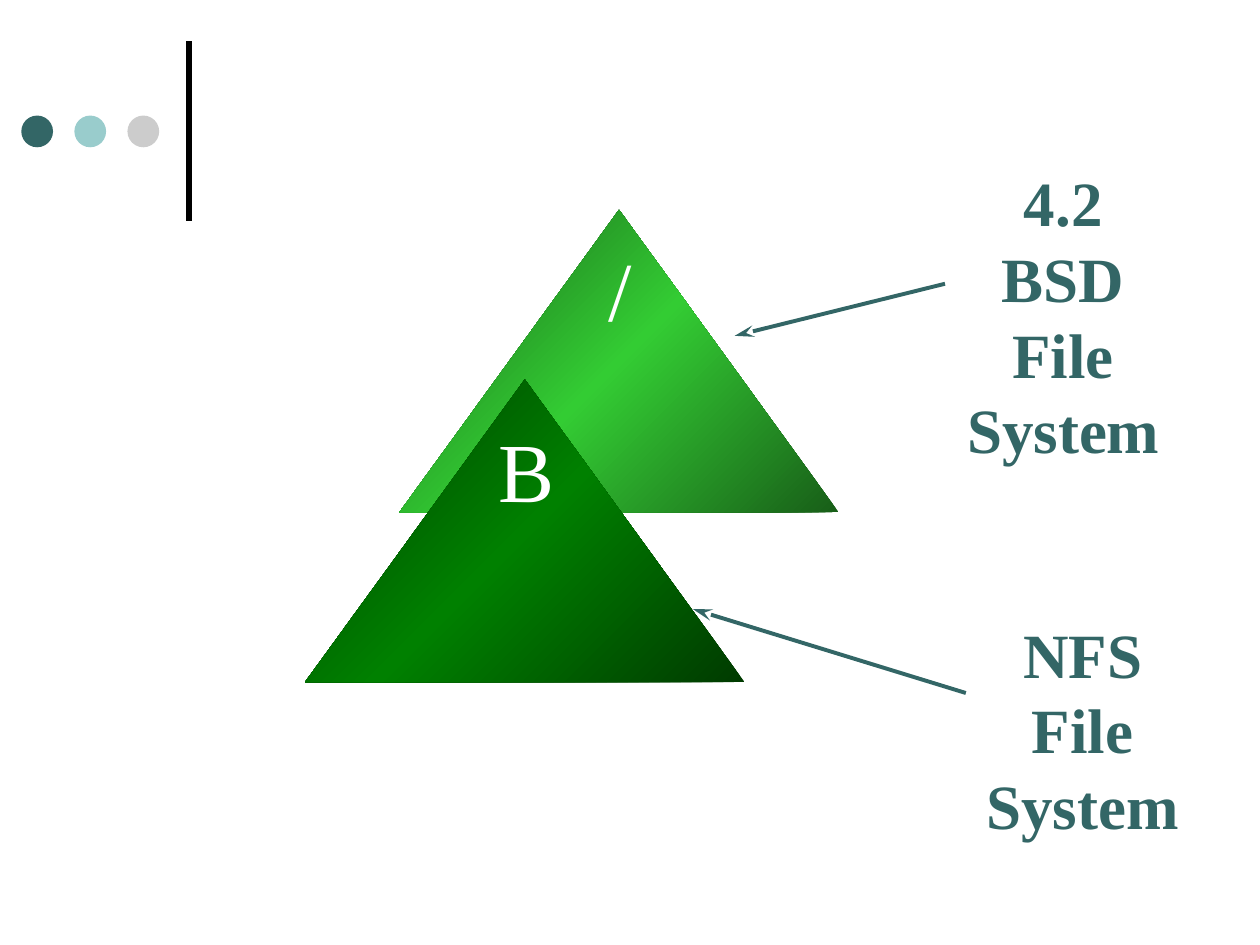
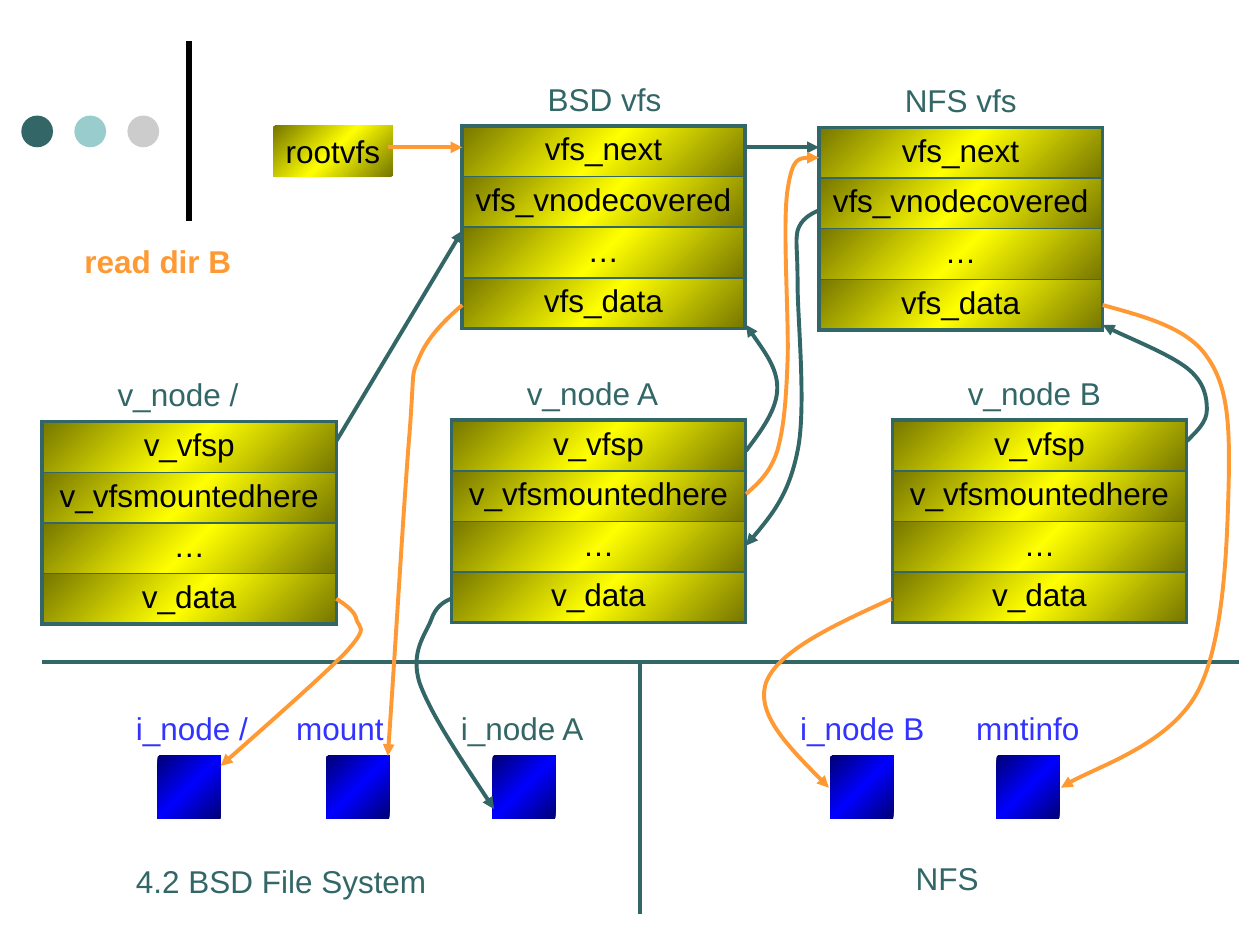
from copy import deepcopy
from itertools import chain

from lxml.etree import SubElement
from pptx import Presentation
from pptx.dml.color import RGBColor
from pptx.enum.shapes import MSO_CONNECTOR as CONN, MSO_SHAPE as SHAPE
from pptx.enum.text import MSO_AUTO_SIZE as FIT, PP_ALIGN as ALIGN
from pptx.oxml.ns import qn
from pptx.util import Cm, Pt

TEAL = RGBColor(0x33, 0x66, 0x66)
AQUA = RGBColor(0x99, 0xCC, 0xCC)
GREY = RGBColor(0xCC, 0xCC, 0xCC)
BLACK = RGBColor(0, 0, 0)
WHITE = RGBColor(0xFF, 0xFF, 0xFF)
ORANGE = RGBColor(0xFF, 0x99, 0x33)
VIOLET = RGBColor(0x33, 0x33, 0xFF)
# Gradients: edge colour, middle colour
LIME_SHADE = RGBColor(0x18, 0x5E, 0x18), RGBColor(0x33, 0xCC, 0x33)
GREEN_SHADE = RGBColor(0, 0x3B, 0), RGBColor(0, 0x80, 0)
YELLOW_SHADE = RGBColor(0x76, 0x76, 0), RGBColor(0xFF, 0xFF, 0)
BLUE_SHADE = RGBColor(0, 0, 0x76), RGBColor(0, 0, 0xFF)


def write(tf, text, size=18, color=TEAL, font="Arial", bold=False,
          align=ALIGN.LEFT, wrap=False, spacing=1.2):
    """Fill a text frame, one paragraph per line of text."""
    tf.word_wrap = wrap
    tf.auto_size = FIT.NONE if wrap else FIT.SHAPE_TO_FIT_TEXT
    for i, line in enumerate(text.split("\n")):
        p = tf.paragraphs[0] if i == 0 else tf.add_paragraph()
        p.alignment = align
        if spacing:
            p.line_spacing = Pt(size * spacing)
        r = p.add_run()
        r.text = line
        r.font.size, r.font.bold, r.font.name = Pt(size), bold, font
        r.font.color.rgb = color


def shade(fill, element, colors):
    """Diagonal gradient: edge, middle, edge."""
    edge, middle = colors
    fill.gradient()
    fill.gradient_angle = 315
    stops = element.find(".//" + qn("a:gsLst"))
    stops.append(deepcopy(stops[0]))
    for stop, pos, color in zip(fill.gradient_stops, (0, 0.5, 1), (edge, middle, edge)):
        stop.position = pos
        stop.color.rgb = color


prs = Presentation()
prs.slide_width, prs.slide_height = Cm(25.4), Cm(19.05)
trees, vfs = [prs.slides.add_slide(prs.slide_layouts[6]) for _ in range(2)]

# Shared dots and rule; lines are (slide, points, colour, width, arrowhead)
lines = []
for s in (trees, vfs):
    for i, color in enumerate((TEAL, AQUA, GREY)):
        sp = s.shapes.add_shape(SHAPE.OVAL, Cm(0.43 + 1.07 * i), Cm(2.33), Cm(0.64), Cm(0.64))
        sp.shadow.inherit = False
        sp.fill.solid()
        sp.fill.fore_color.rgb = color
        sp.line.fill.background()
    lines.append((s, [(3.81, 4.45), (3.81, 0.83)], BLACK, 3, None))

# Gradient shapes: the two file trees and the disk structures
blocks = [
    (trees, SHAPE.ISOSCELES_TRIANGLE, 8.05, 4.23, 8.86, 6.1, LIME_SHADE),
    (trees, SHAPE.ISOSCELES_TRIANGLE, 6.15, 7.65, 8.86, 6.1, GREEN_SHADE),
]
blocks += [(vfs, SHAPE.RECTANGLE, x, 15.24, 1.27, 1.27, BLUE_SHADE)
           for x in (3.18, 6.58, 9.93, 16.74, 20.09)]
for s, kind, x, y, w, h, colors in blocks:
    sp = s.shapes.add_shape(kind, Cm(x), Cm(y), Cm(w), Cm(h))
    sp.shadow.inherit = False
    sp.line.fill.background()
    shade(sp.fill, sp._element, colors)

# Slide 1: tree names and labels
root_name = dict(size=48, color=WHITE, font="Times New Roman")
fs_label = dict(size=36, font="Times New Roman", bold=True, align=ALIGN.CENTER, wrap=True)
for text, x, y, w, h, fmt in (
    ("/", 12.01, 4.67, 0.97, 2.29, root_name),
    ("B", 9.8, 8.31, 1.63, 2.29, root_name),
    ("4.2 BSD\nFile\nSystem", 19, 3.18, 4.87, 4.83, fs_label),
    ("NFS\nFile\nSystem", 19.63, 12.28, 4.39, 4.83, fs_label),
):
    write(trees.shapes.add_textbox(Cm(x), Cm(y), Cm(w), Cm(h)).text_frame, text, **fmt)
for points in ([(19.05, 5.72), (14.81, 6.77)], [(19.47, 13.97), (13.97, 12.28)]):
    lines.append((trees, points, TEAL, 2.25, "stealth"))

# Slide 2: the root pointer
sp = vfs.shapes.add_shape(SHAPE.RECTANGLE, Cm(5.51), Cm(2.54), Cm(2.41), Cm(1.02))
sp.shadow.inherit = False
sp.line.fill.background()
shade(sp.fill, sp._element, YELLOW_SHADE)
write(sp.text_frame, "rootvfs", color=BLACK)

# Slide 2: record tables with their captions
VFS_ROWS = "vfs_next", "vfs_vnodecovered", "…", "vfs_data"
NODE_ROWS = "v_vfsp", "v_vfsmountedhere", "…", "v_data"
ROW = 1.02
captions = []
for name, x, y, w, rows, indent, name_w in (
    ("BSD vfs", 9.31, 2.54, 5.71, VFS_ROWS, 1.48, 3),
    ("NFS vfs", 16.51, 2.57, 5.71, VFS_ROWS, 1.48, 3),
    ("v_node /", 0.85, 8.5, 5.93, NODE_ROWS, 1.27, 3.2),
    ("v_node A", 9.1, 8.47, 5.93, NODE_ROWS, 1.27, 3.2),
    ("v_node B", 17.99, 8.47, 5.93, NODE_ROWS, 1.27, 3.2),
):
    captions.append((name, x + indent, y - 1.06, name_w, TEAL, False))
    table = vfs.shapes.add_table(4, 1, Cm(x), Cm(y), Cm(w), Cm(4 * ROW)).table
    table.first_row = table.horz_banding = False
    for i, text in enumerate(rows):
        table.rows[i].height = Cm(ROW)
        cell = table.cell(i, 0)
        write(cell.text_frame, text, color=BLACK, align=ALIGN.CENTER, wrap=True, spacing=None)
        tcPr = cell._tc.get_or_add_tcPr()
        widths = (2.25, 2.25, 2.25 if i == 0 else 1, 2.25 if i == 3 else 1)
        for side, width in zip("LRTB", widths):
            ln = SubElement(tcPr, qn("a:ln" + side), w=str(Pt(width)))
            SubElement(SubElement(ln, qn("a:solidFill")), qn("a:srgbClr"), val=str(TEAL))
        shade(cell.fill, cell._tc, YELLOW_SHADE)

# Slide 2: other captions (text, left, top, width, colour, bold)
DISK_Y = 14.17
captions += [
    ("i_node /", 2.49, DISK_Y, 2.9, VIOLET, False),
    ("mount", 5.72, DISK_Y, 2.4, VIOLET, False),
    ("i_node A", 9.04, DISK_Y, 3.1, TEAL, False),
    ("i_node B", 15.88, DISK_Y, 3.1, VIOLET, False),
    ("mntinfo", 19.43, DISK_Y, 2.7, VIOLET, False),
    ("4.2 BSD File System", 2.49, 17.25, 6.5, TEAL, False),
    ("NFS", 18.21, 17.2, 1.9, TEAL, False),
    ("read dir B", 1.45, 4.75, 3.6, ORANGE, True),
]
for text, x, y, w, color, bold in captions:
    tb = vfs.shapes.add_textbox(Cm(x), Cm(y), Cm(w), Cm(1.02))
    write(tb.text_frame, text, color=color, bold=bold)

# Slide 2: dividers
for points in ([(0.85, 13.34), (24.98, 13.34)], [(12.9, 13.34), (12.9, 18.42)]):
    lines.append((vfs, points, TEAL, 2.25, None))

# Slide 2: pointers; longer ones are a start followed by Bezier triples
for color, points in (
    (ORANGE, [(7.82, 2.97), (9.32, 2.97)]),
    (TEAL, [(15.04, 2.97), (16.51, 2.97)]),
    (TEAL, [(6.78, 8.89), (9.32, 4.65)]),
    (TEAL, [(15.04, 9.09), (15.34, 8.69), (15.67, 8.26), (15.67, 7.82),
            (15.67, 7.42), (15.34, 6.99), (15.04, 6.55)]),
    (ORANGE, [(6.78, 12.07), (6.96, 12.19), (7.16, 12.32), (7.19, 12.5),
              (7.24, 12.67), (7.44, 12.62), (6.99, 13.13),
              (6.53, 13.61), (4.9, 15.04), (4.45, 15.44)]),
    (ORANGE, [(9.32, 6.15), (8.97, 6.45), (8.64, 6.78), (8.46, 7.19),
              (8.28, 7.62), (8.36, 7.34), (8.26, 8.69),
              (8.15, 10.01), (8, 12.62), (7.82, 15.24)]),
    (TEAL, [(9.09, 12.07), (8.94, 12.14), (8.79, 12.22), (8.69, 12.5),
            (8.59, 12.78), (8.26, 13.13), (8.46, 13.77),
            (8.69, 14.4), (9.32, 15.34), (9.96, 16.31)]),
    (ORANGE, [(15.04, 9.96), (15.27, 9.75), (15.52, 9.55), (15.67, 9.09),
              (15.8, 8.64), (15.85, 8.08), (15.88, 7.19),
              (15.9, 6.32), (15.77, 4.47), (15.88, 3.81),
              (15.98, 3.15), (16.26, 3.15), (16.51, 3.18)]),
    (TEAL, [(16.51, 4.24), (16.33, 4.32), (16.15, 4.42), (16.08, 4.65),
            (16.03, 4.9), (16.08, 4.98), (16.08, 5.72),
            (16.08, 6.45), (16.26, 8.23), (16.08, 9.09),
            (15.9, 9.98), (15.47, 10.49), (15.04, 11)]),
    (ORANGE, [(17.98, 12.07), (16.81, 12.6), (15.67, 13.13), (15.44, 13.77),
              (15.24, 14.4), (15.98, 15.14), (16.71, 15.88)]),
    (ORANGE, [(22.23, 6.15), (23.06, 6.38), (23.93, 6.6), (24.33, 7.19),
              (24.77, 7.8), (24.79, 8.61), (24.77, 9.73),
              (24.74, 10.87), (24.69, 12.95), (24.13, 13.97),
              (23.57, 14.99), (21.87, 15.54), (21.39, 15.88)]),
    (TEAL, [(23.93, 8.89), (24.13, 8.69), (24.33, 8.51), (24.33, 8.26),
            (24.33, 8), (24.28, 7.7), (23.93, 7.42),
            (23.57, 7.14), (22.5, 6.71), (22.23, 6.55)]),
):
    lines.append((vfs, points, color, 2.25, "triangle"))

# Draw every line, arrow and curve
for s, points, color, width, arrow in lines:
    points = [(Cm(x), Cm(y)) for x, y in points]
    if len(points) == 2:
        sp = s.shapes.add_connector(CONN.STRAIGHT, *chain(*points))
    else:
        builder = s.shapes.build_freeform(*points[0])
        builder.add_line_segments(points[1:], close=False)
        sp = builder.convert_to_shape()
        sp.fill.background()
        # Turn each three straight segments into one Bezier curve
        outline = sp._element.find(".//" + qn("a:path"))
        segments = outline.findall(qn("a:lnTo"))
        for i in range(0, len(segments), 3):
            curve = SubElement(outline, qn("a:cubicBezTo"))
            for segment in segments[i:i + 3]:
                curve.append(segment[0])
                outline.remove(segment)
    sp.line.color.rgb = color
    sp.line.width = Pt(width)
    spPr = sp._element.spPr
    if arrow:
        length = "lg" if arrow == "stealth" else "med"
        SubElement(spPr.find(qn("a:ln")), qn("a:tailEnd"), type=arrow, len=length)
    SubElement(spPr, qn("a:effectLst"))

prs.save("out.pptx")
